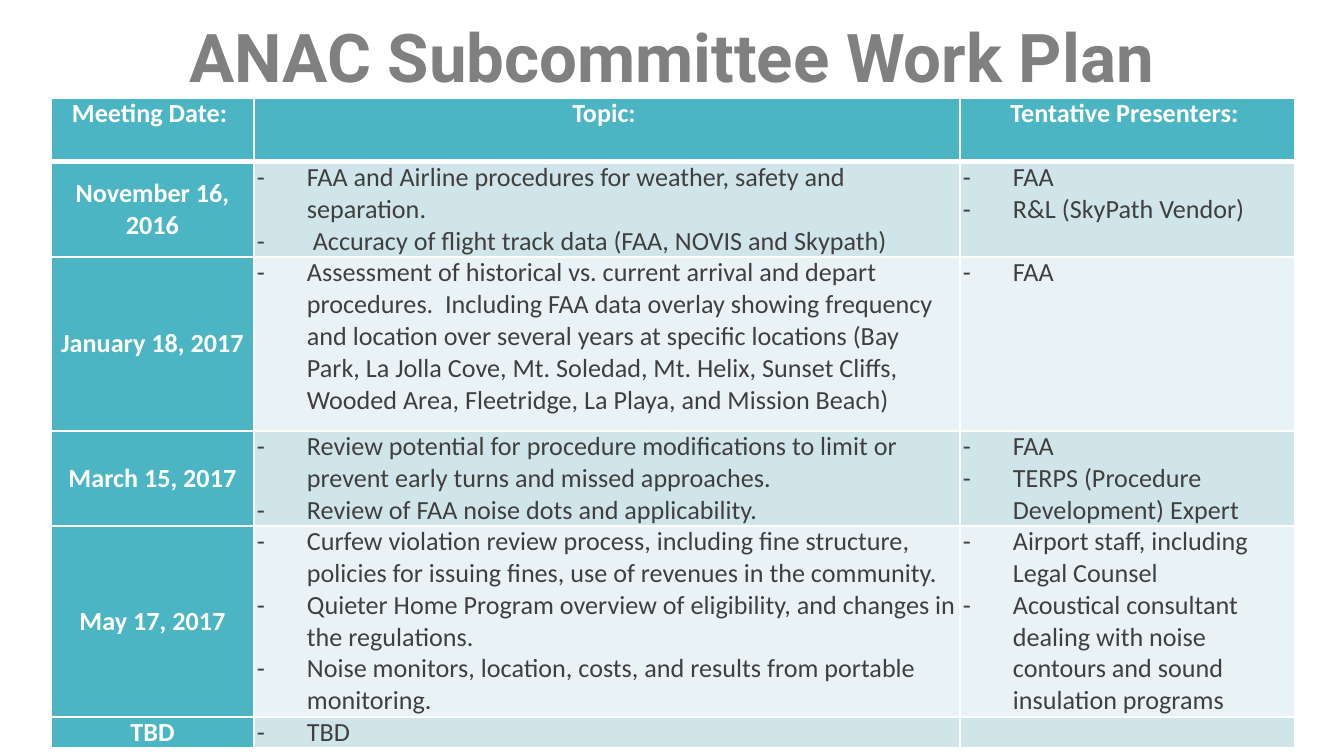
from lxml.etree import SubElement
from pptx import Presentation
from pptx.dml.color import RGBColor
from pptx.enum.text import MSO_ANCHOR as Anchor, PP_ALIGN as Align
from pptx.oxml.ns import qn
from pptx.util import Emu, Pt

WHITE = RGBColor(0xFF, 0xFF, 0xFF)
GRAY = RGBColor(0x80, 0x80, 0x80)
INK = RGBColor(0x3F, 0x3F, 0x3F)
TEAL = RGBColor(0x4B, 0xB5, 0xC3)
BANDS = RGBColor(0xD0, 0xE5, 0xE9), RGBColor(0xE9, 0xF3, 0xF5)

COLUMN_WIDTHS = 203, 706, 335
ROW_HEIGHTS = 64, 95, 174, 95, 191, 31
HEADINGS = "Meeting Date: ", "Topic: ", "Tentative Presenters: "
MEETINGS = [
    ("November 16, 2016",
     ["FAA and Airline procedures for weather, safety and separation.",
      " Accuracy of flight track data (FAA, NOVIS and Skypath)"],
     ["FAA", "R&L (SkyPath Vendor)"]),
    ("January 18, 2017",
     ["Assessment of historical vs. current arrival and depart procedures.  "
      "Including FAA data overlay showing frequency and location over several "
      "years at specific locations (Bay Park, La Jolla Cove, Mt. Soledad, "
      "Mt. Helix, Sunset Cliffs, Wooded Area, Fleetridge, La Playa, and "
      "Mission Beach)"],
     ["FAA"]),
    ("March 15, 2017",
     ["Review potential for procedure modifications to limit or prevent early "
      "turns and missed approaches.",
      "Review of FAA noise dots and applicability."],
     ["FAA", "TERPS (Procedure Development) Expert"]),
    ("May 17, 2017",
     ["Curfew violation review process, including fine structure, policies for "
      "issuing fines, use of revenues in the community.",
      "Quieter Home Program overview of eligibility, and changes in the "
      "regulations.",
      "Noise monitors, location, costs, and results from portable monitoring."],
     ["Airport staff, including Legal Counsel",
      "Acoustical consultant dealing with noise contours and sound insulation "
      "programs"]),
    ("TBD", ["TBD"], []),
]


def px(length):
    """Turn px into EMU."""
    return Emu(round(length * 914400 / 134.4))


def write(frame, lines, *, size=14, font="Calibri", color=INK, bold=False,
          align=Align.LEFT, dashed=False):
    """Fill a text frame with one paragraph for each line."""
    for index, line in enumerate(lines):
        paragraph = frame.paragraphs[0] if index == 0 else frame.add_paragraph()
        paragraph.alignment = align
        if dashed:
            properties = paragraph._p.get_or_add_pPr()
            properties.set("marL", str(px(50)))
            properties.set("indent", str(-px(50)))
            SubElement(properties, qn("a:buFont"), typeface="Calibri")
            SubElement(properties, qn("a:buChar"), char="-")
        run = paragraph.add_run()
        run.text = line
        run.font.size = Pt(size)
        run.font.name = font
        run.font.bold = bold
        run.font.color.rgb = color
    if not lines:
        SubElement(frame.paragraphs[0]._p, qn("a:endParaRPr"), sz=str(size * 100))


def style_cell(cell, fill, *, anchor=Anchor.TOP, top=1, bottom=1):
    """Set the borders, fill, margins and anchor of a cell."""
    properties = cell._tc.get_or_add_tcPr()
    for side, width in zip("LRTB", (1, 1, top, bottom)):
        border = SubElement(properties, qn(f"a:ln{side}"), w=str(Pt(width)))
        paint = SubElement(border, qn("a:solidFill"))
        SubElement(paint, qn("a:srgbClr"), val=str(WHITE))
    cell.fill.solid()
    cell.fill.fore_color.rgb = fill
    cell.margin_left = cell.margin_right = px(3)
    cell.margin_top = cell.margin_bottom = 0
    cell.vertical_anchor = anchor


def add_title(slide, left, top, width, height):
    """Place the slide title in its box."""
    title = slide.shapes.add_textbox(px(left), px(top), px(width), px(height))
    frame = title.text_frame
    frame.word_wrap = True
    frame.vertical_anchor = Anchor.MIDDLE
    write(frame, ["ANAC Subcommittee Work Plan"], size=36, font="Roboto",
          color=GRAY, bold=True, align=Align.CENTER)


def add_work_plan(slide, left, top):
    """Place the table of meetings with its corner at left and top."""
    plan = slide.shapes.add_table(
        len(ROW_HEIGHTS), len(COLUMN_WIDTHS), px(left), px(top),
        px(sum(COLUMN_WIDTHS)), px(sum(ROW_HEIGHTS))).table
    plan.horz_banding = False
    for column, width in zip(plan.columns, COLUMN_WIDTHS):
        column.width = px(width)
    for row, height in zip(plan.rows, ROW_HEIGHTS):
        row.height = px(height)
    label = dict(color=WHITE, bold=True, align=Align.CENTER)
    for column, heading in enumerate(HEADINGS):
        cell = plan.cell(0, column)
        style_cell(cell, TEAL, bottom=3)
        write(cell.text_frame, [heading], **label)
    for row, (date, topics, presenters) in enumerate(MEETINGS, 1):
        above = 3 if row == 1 else 1
        date_cell = plan.cell(row, 0)
        style_cell(date_cell, TEAL, anchor=Anchor.MIDDLE, top=above)
        write(date_cell.text_frame, [date], **label)
        for column, items in enumerate((topics, presenters), 1):
            cell = plan.cell(row, column)
            style_cell(cell, BANDS[(row - 1) % 2], top=above)
            write(cell.text_frame, items, dashed=True)


def main():
    """Build and save the slide."""
    deck = Presentation()
    deck.slide_width, deck.slide_height = px(1344), px(756)
    slide = deck.slides.add_slide(deck.slide_layouts[6])
    add_title(slide, 0, -7, 1344, 126)
    add_work_plan(slide, 51, 98)
    deck.save("out.pptx")


if __name__ == "__main__":
    main()
